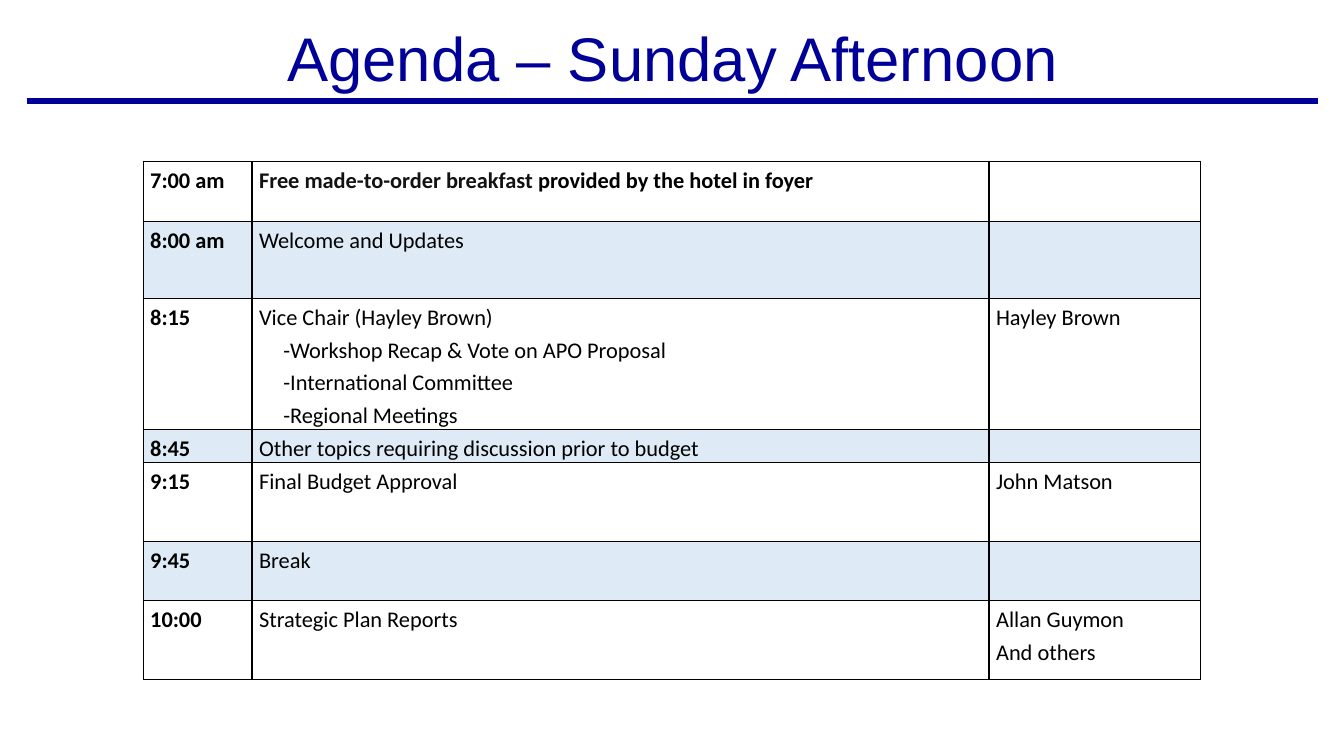
from dataclasses import dataclass

from lxml import etree
from pptx import Presentation
from pptx.dml.color import RGBColor
from pptx.enum.shapes import MSO_CONNECTOR
from pptx.enum.text import MSO_ANCHOR, MSO_AUTO_SIZE, PP_ALIGN
from pptx.oxml.ns import qn
from pptx.slide import Slide
from pptx.table import _Cell
from pptx.util import Inches, Pt

STRAIGHT = MSO_CONNECTOR.STRAIGHT
MIDDLE = MSO_ANCHOR.MIDDLE
NO_AUTOFIT = MSO_AUTO_SIZE.NONE
CENTER = PP_ALIGN.CENTER

NAVY = "000099"
BLACK = "000000"
CHARCOAL = "121212"
BAND = "5B9BD5"
BAND_ALPHA = 20
COLUMN_WIDTHS = (1.08, 7.31, 2.1)
SUBTOPIC_INDENT = 0.24


@dataclass(frozen=True)
class Session:
    height: float
    time: str
    topic: str
    subtopics: tuple[str, ...] = ()
    presenters: tuple[str, ...] = ()
    bold_lead: str = ""


SESSIONS = (
    Session(0.6, "7:00 am", "provided by the hotel in foyer",
            bold_lead="Free made-to-order breakfast "),
    Session(0.76, "8:00 am", "Welcome and Updates"),
    Session(0.65, "8:15", "Vice Chair (Hayley Brown)",
            subtopics=("-Workshop Recap & Vote on APO Proposal",
                       "-International Committee",
                       "-Regional Meetings"),
            presenters=("Hayley Brown",)),
    Session(0.27, "8:45", "Other topics requiring discussion prior to budget"),
    Session(0.78, "9:15", "Final Budget Approval", presenters=("John Matson",)),
    Session(0.59, "9:45", "Break"),
    Session(0.78, "10:00", "Strategic Plan Reports",
            presenters=("Allan Guymon", "And others")),
)


def rgb(color: str) -> RGBColor:
    return RGBColor.from_string(color)


def add_heading(slide: Slide, text: str) -> None:
    heading = slide.shapes.title
    heading.left, heading.top = Inches(0.16), Inches(0.21)
    heading.width, heading.height = Inches(13.03), Inches(0.8)
    frame = heading.text_frame
    frame.text = text
    frame.auto_size = NO_AUTOFIT
    frame.vertical_anchor = MIDDLE
    paragraph = frame.paragraphs[0]
    paragraph.alignment = CENTER
    paragraph.line_spacing = 0.9
    font = paragraph.runs[0].font
    font.name, font.size = "Arial", Pt(44)
    font.color.rgb = rgb(NAVY)


def add_rule(slide: Slide) -> None:
    rule = slide.shapes.add_connector(
        STRAIGHT, Inches(0.27), Inches(1), Inches(13.07), Inches(1))
    rule.line.color.rgb = rgb(NAVY)
    rule.line.width = Pt(4.5)
    etree.SubElement(rule._element.spPr, qn("a:effectLst"))


def style_cell(cell: _Cell, banded: bool) -> None:
    cell.margin_left = cell.margin_right = Inches(0.07)
    cell.margin_top = cell.margin_bottom = 0
    properties = cell._tc.get_or_add_tcPr()
    for side in ("a:lnL", "a:lnR", "a:lnT", "a:lnB"):
        border = etree.SubElement(properties, qn(side), w=str(Pt(1)))
        solid = etree.SubElement(border, qn("a:solidFill"))
        etree.SubElement(solid, qn("a:srgbClr"), val=BLACK)
    if banded:
        cell.fill.solid()
        cell.fill.fore_color.rgb = rgb(BAND)
        band_color = properties.find(qn("a:solidFill")).find(qn("a:srgbClr"))
        etree.SubElement(band_color, qn("a:alpha"), val=str(BAND_ALPHA * 1000))
    else:
        cell.fill.background()


def write_cell(cell: _Cell, lines: tuple[str, ...], bold: bool = False) -> None:
    cell.text_frame.text = "\n".join(lines)
    for paragraph in cell.text_frame.paragraphs:
        for run in paragraph.runs:
            paragraph.line_spacing = 1.2
            run.font.name, run.font.size = "Calibri", Pt(16)
            run.font.bold = bold
            run.font.color.rgb = rgb(BLACK)


def write_topic(cell: _Cell, session: Session) -> None:
    opening = (session.bold_lead or session.topic,)
    write_cell(cell, opening + session.subtopics, bold=bool(session.bold_lead))
    first, *subtopics = cell.text_frame.paragraphs
    for subtopic in subtopics:
        subtopic._p.get_or_add_pPr().set("marL", str(Inches(SUBTOPIC_INDENT)))
    if session.bold_lead:
        first.runs[0].font.color.rgb = rgb(CHARCOAL)
        ending = first.add_run()
        ending.text = session.topic
        ending.font.name, ending.font.size = "Calibri", Pt(16)
        ending.font.bold = True
        ending.font.color.rgb = rgb(BLACK)


def add_agenda(slide: Slide) -> None:
    agenda = slide.shapes.add_table(
        len(SESSIONS), len(COLUMN_WIDTHS),
        Inches(1.42), Inches(1.6), Inches(10.48), Inches(5.06)).table
    agenda.first_row = False
    agenda.horz_banding = False
    for column, width in zip(agenda.columns, COLUMN_WIDTHS):
        column.width = Inches(width)
    for index, (row, session) in enumerate(zip(agenda.rows, SESSIONS)):
        row.height = Inches(session.height)
        time, topic, presenters = row.cells
        for cell in (time, topic, presenters):
            style_cell(cell, banded=index % 2 == 1)
        write_cell(time, (session.time,), bold=True)
        write_topic(topic, session)
        write_cell(presenters, session.presenters)


def main() -> None:
    deck = Presentation()
    deck.slide_width, deck.slide_height = Inches(13.33), Inches(7.5)
    slide = deck.slides.add_slide(deck.slide_layouts.get_by_name("Title Only"))
    add_heading(slide, "Agenda – Sunday Afternoon")
    add_rule(slide)
    add_agenda(slide)
    deck.save("out.pptx")


if __name__ == "__main__":
    main()
